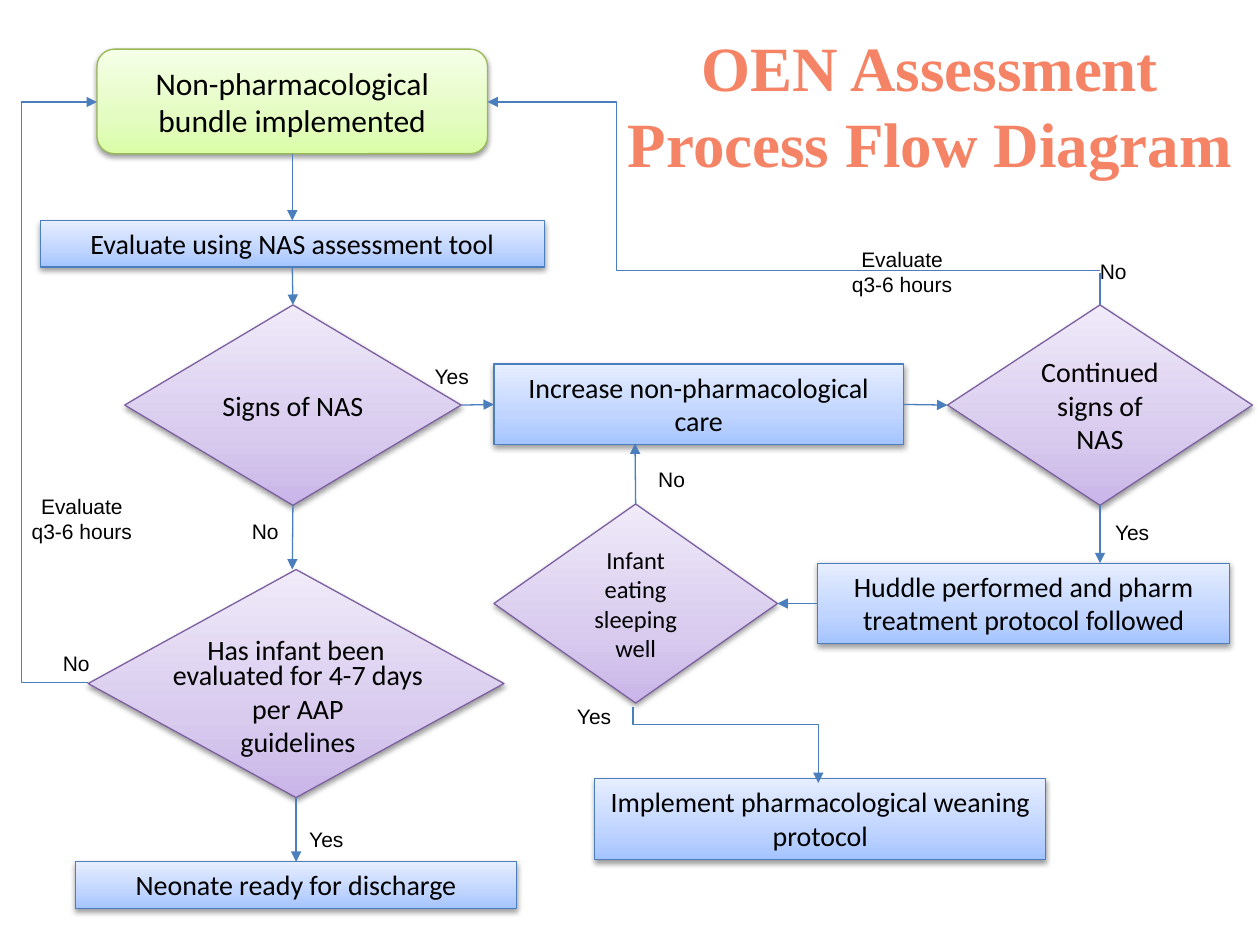
from copy import deepcopy

from pptx import Presentation
from pptx.dml.color import RGBColor
from pptx.enum.shapes import MSO_CONNECTOR, MSO_SHAPE
from pptx.enum.text import MSO_ANCHOR, MSO_AUTO_SIZE, PP_ALIGN
from pptx.oxml import parse_xml
from pptx.oxml.ns import nsdecls, qn
from pptx.util import Inches, Pt

BLACK = RGBColor(0x00, 0x00, 0x00)
CORAL = RGBColor(0xF5, 0x84, 0x66)
BLUE = RGBColor(0x4B, 0x7E, 0xBC)
PURPLE = RGBColor(0x7D, 0x60, 0xA0)
GREEN = RGBColor(0x98, 0xB9, 0x55)
# Gradient stops run from bottom to top
SKY = [RGBColor(0xA4, 0xC4, 0xFF), RGBColor(0xBF, 0xD4, 0xFF), RGBColor(0xE6, 0xEE, 0xFF)]
LILAC = [RGBColor(0xC9, 0xB5, 0xE8), RGBColor(0xD8, 0xCB, 0xEE), RGBColor(0xF0, 0xEA, 0xF9)]
LIME = [RGBColor(0xDA, 0xFD, 0xA7), RGBColor(0xE4, 0xFC, 0xC2), RGBColor(0xF5, 0xFF, 0xE7)]
STOPS = [0, 0.35, 1]

SHADOW = (f'<a:outerShdw {nsdecls("a")} blurRad="40000" dist="20000" dir="5400000" '
          'rotWithShape="0"><a:srgbClr val="000000"><a:alpha val="38000"/>'
          '</a:srgbClr></a:outerShdw>')
ARROW = f'<a:tailEnd {nsdecls("a")} type="triangle"/>'
TOP, LEFT, BOTTOM, RIGHT = range(4)


class Chart:
    """Style and current slide of the flow diagram."""

    body = {"name": "Calibri", "size": Pt(16)}
    note = {"name": "Arial", "size": Pt(12)}
    head = {"name": "Times New Roman", "size": Pt(36), "bold": True}

    def __init__(self, slide):
        self.slide = slide

    def style(self, font, look, color=BLACK):
        for key, value in look.items():
            setattr(font, key, value)
        font.color.rgb = color

    def set_text(self, frame, text, look, color=BLACK, anchor=MSO_ANCHOR.TOP, wrap=True):
        frame.text = text
        frame.auto_size = MSO_AUTO_SIZE.NONE
        frame.word_wrap = wrap
        frame.vertical_anchor = anchor
        for para in frame.paragraphs:
            para.alignment = PP_ALIGN.CENTER
            for run in para.runs:
                self.style(run.font, look, color)

    def title(self, text, *box):
        holder = self.slide.shapes.title
        holder.left, holder.top, holder.width, holder.height = map(Inches, box)
        self.set_text(holder.text_frame, text, self.head, CORAL)

    def node(self, kind, text, box, fill, edge, size=16, anchor=MSO_ANCHOR.MIDDLE):
        shape = self.slide.shapes.add_shape(kind, *map(Inches, box))
        shape.fill.gradient()
        shape.fill.gradient_angle = 90
        props = shape._element.spPr
        first = props.find(".//" + qn("a:gs"))
        first.addnext(deepcopy(first))
        for stop, place, color in zip(shape.fill.gradient_stops, STOPS, fill):
            stop.position = place
            stop.color.rgb = color
        shape.line.color.rgb = edge
        shape.line.width = Pt(0.75)
        shape.shadow.inherit = False
        props.find(qn("a:effectLst")).append(parse_xml(SHADOW))
        look = {**self.body, "size": Pt(size)}
        self.set_text(shape.text_frame, text, look, anchor=anchor)
        return shape

    def step(self, text, *box):
        return self.node(MSO_SHAPE.RECTANGLE, text, box, SKY, BLUE, anchor=MSO_ANCHOR.TOP)

    def choice(self, text, *box, size=16):
        return self.node(MSO_SHAPE.FLOWCHART_DECISION, text, box, LILAC, PURPLE, size)

    def text(self, words, *box, look=None, wrap=True):
        area = self.slide.shapes.add_textbox(*map(Inches, box))
        self.set_text(area.text_frame, words, look or self.note, wrap=wrap)
        return area

    def answer(self, word, left, top, width=0.58):
        para = self.text(word, left, top, width, 0.4).text_frame.paragraphs[0]
        space = para.add_run()
        space.text = " "
        self.style(space.font, {**self.note, "size": Pt(18)})

    def line(self, *ends, kind=MSO_CONNECTOR.STRAIGHT, arrow=True):
        link = self.slide.shapes.add_connector(kind, *map(Inches, ends))
        link.line.color.rgb = BLUE
        link.line.width = Pt(0.75)
        props = link._element.spPr
        if arrow:
            props.find(qn("a:ln")).append(parse_xml(ARROW))
        props.append(parse_xml(f'<a:effectLst {nsdecls("a")}/>'))
        return link

    def join(self, start, side, end=None, port=None, ends=(0, 0, 0, 0)):
        link = self.line(*ends)
        link.begin_connect(start, side)
        if end is not None:
            link.end_connect(end, port)

    def bend(self, *ends, turn, spin=0):
        link = self.line(*ends, kind=MSO_CONNECTOR.ELBOW)
        props = link._element.spPr
        guide = f'<a:gd {nsdecls("a")} name="adj1" fmla="val {round(turn * 100000)}"/>'
        geom = props.find(qn("a:prstGeom"))
        geom.get_or_add_avLst().append(parse_xml(guide))
        if spin:
            props.find(qn("a:xfrm")).set("rot", str(spin * 60000))


def main():
    deck = Presentation()
    deck.slide_width, deck.slide_height = Inches(10), Inches(7.5)
    flow = Chart(deck.slides.add_slide(deck.slide_layouts[5]))
    flow.title("OEN Assessment Process Flow Diagram", 4.76, 0.18, 5.24, 1.25)

    # Steps and decisions
    start = flow.node(MSO_SHAPE.ROUNDED_RECTANGLE, "Non-pharmacological bundle implemented",
                      (0.77, 0.39, 3.1, 0.83), LIME, GREEN, 18)
    tool = flow.step("Evaluate using NAS assessment tool", 0.32, 1.75, 4, 0.37)
    signs = flow.choice("Signs of NAS", 0.99, 2.42, 2.67, 1.59)
    days = flow.node(MSO_SHAPE.DIAMOND, "Has infant been", (0.7, 4.52, 3.3, 1.81),
                     LILAC, PURPLE, anchor=MSO_ANCHOR.TOP)
    flow.text("evaluated for 4-7 days\nper AAP\nguidelines", 1.15, 5.17, 2.43, 0.91,
              look=flow.body)
    ready = flow.step("Neonate ready for discharge", 0.6, 6.84, 3.5, 0.37)
    care = flow.step("Increase non-pharmacological care", 3.92, 2.89, 3.25, 0.64)
    still = flow.choice("Continued signs of NAS", 7.52, 2.42, 2.42, 1.59)
    huddle = flow.step("Huddle performed and pharm treatment protocol followed",
                       6.49, 4.47, 3.27, 0.64)
    well = flow.choice("Infant eating sleeping well", 3.92, 4, 2.25, 1.58, size=14)
    flow.step("Implement pharmacological weaning protocol", 4.72, 6.18, 3.58, 0.64)

    # Straight arrows between side middles
    for link in [(start, BOTTOM, tool, TOP), (tool, BOTTOM, signs, TOP),
                 (signs, RIGHT, care, LEFT), (care, RIGHT, still, LEFT),
                 (days, BOTTOM, ready, TOP), (huddle, LEFT, well, RIGHT)]:
        flow.join(*link)

    # Straight arrows that end away from a middle
    flow.join(signs, BOTTOM, ends=(2.32, 4, 2.32, 4.52))
    flow.join(still, BOTTOM, ends=(8.73, 4, 8.73, 4.47))
    flow.join(well, TOP, ends=(5.04, 4, 5.04, 3.52))

    # Return loops and the bend to weaning
    flow.bend(0.7, 5.42, 0.77, 0.81, turn=-7.57)
    flow.bend(8.73, 2.15, 3.87, 0.81, turn=0.79)
    flow.line(8.73, 2.42, 8.73, 2.17, arrow=False)
    flow.bend(6.06, 5.18, 5.46, 6.65, turn=0.23, spin=270)

    # Labels
    hours = "Evaluate\nq3-6 hours"
    flow.text(hours, 0.11, 3.87, 1.08, 0.5)
    flow.text(hours, 6.66, 1.91, 1, 0.5, wrap=False)
    for label in [("No", 0.35, 5.03), ("No", 8.58, 1.92), ("No", 1.85, 3.98),
                  ("No", 5.02, 3.57, 0.69), ("Yes", 3.33, 2.75), ("Yes", 8.73, 3.99),
                  ("Yes", 4.46, 5.45), ("Yes", 2.29, 6.43, 0.67)]:
        flow.answer(*label)

    deck.save("out.pptx")


if __name__ == "__main__":
    main()
